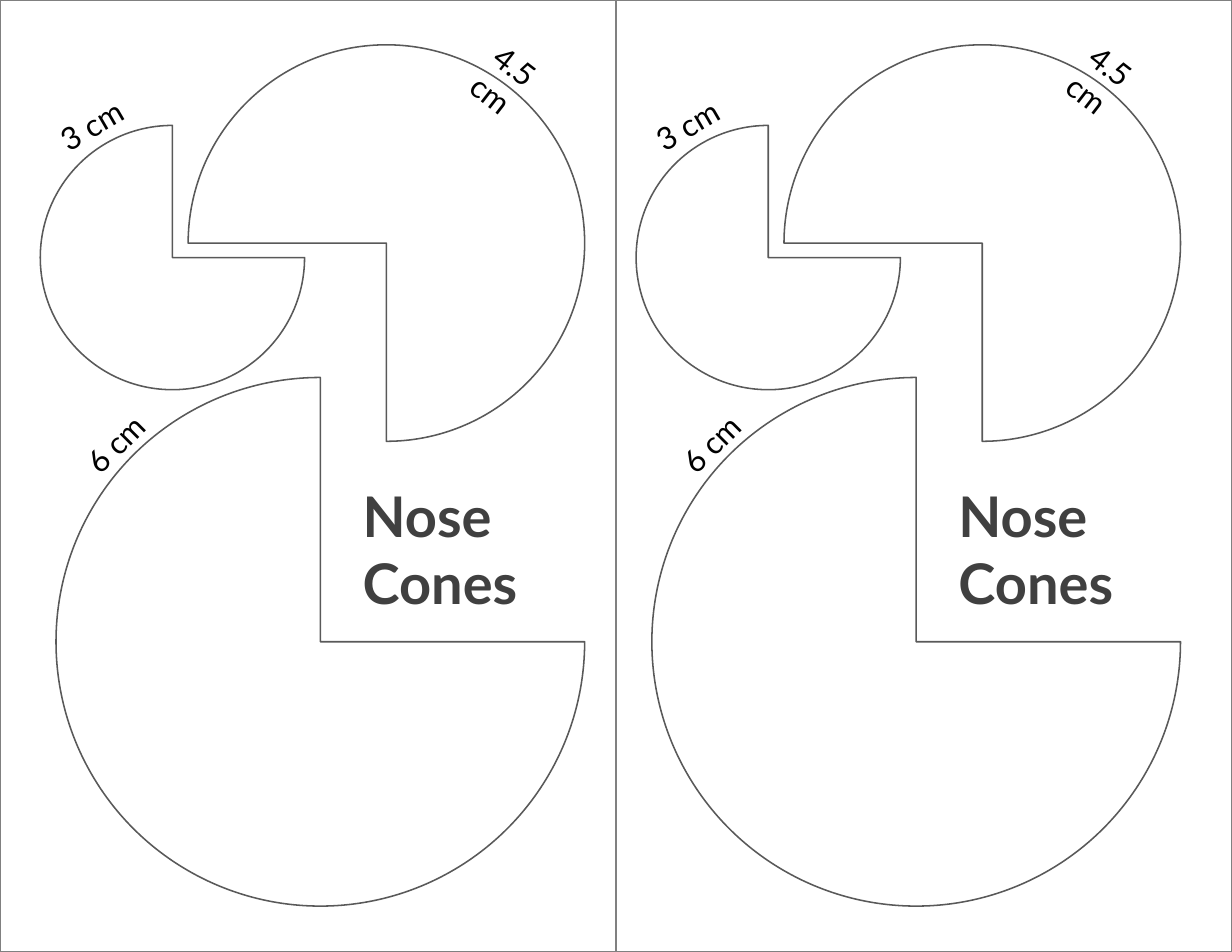
from lxml import etree
from pptx import Presentation
from pptx.dml.color import RGBColor
from pptx.enum.shapes import MSO_SHAPE
from pptx.enum.text import MSO_AUTO_SIZE
from pptx.oxml.ns import qn
from pptx.util import Inches, Pt

PIE = MSO_SHAPE.PIE
GROW = MSO_AUTO_SIZE.SHAPE_TO_FIT_TEXT
COLORS = {"border": "808080", "outline": "595959", "title": "404040", "label": "000000"}
FONT = "Lato"
PAGE_W, PAGE_H = 11, 8.5
HALF_W = PAGE_W / 2
TEMPLATE_LEFTS = (0.36, 5.68)

# left, top, diameter, rotation
CONES = [(0.14, 2.97, 4.72, 0), (1.32, 0, 3.54, 180), (0, 0.72, 2.36, 0)]
# text, left, top, width, rotation
RADII = [
    ("6 cm", 0.27, 3.33, 0.83, 315),
    ("3 cm", 0.06, 0.49, 0.83, 329.8),
    ("4.5 cm", 3.9, 0.1, 1.01, 37.8),
]


def add_border(cell):
    props = cell._tc.get_or_add_tcPr()
    for position, side in enumerate(("lnL", "lnR", "lnT", "lnB")):
        line = etree.Element(qn(f"a:{side}"), w=str(Pt(1)))
        fill = etree.SubElement(line, qn("a:solidFill"))
        etree.SubElement(fill, qn("a:srgbClr"), val=COLORS["border"])
        props.insert(position, line)


def add_page_halves(slide, left, top, width, height):
    halves = slide.shapes.add_table(
        1, 2, Inches(left), Inches(top), Inches(width), Inches(height)
    ).table
    halves.first_row = halves.horz_banding = False
    for column in halves.columns:
        column.width = Inches(width / 2)
    for cell in halves.iter_cells():
        cell.fill.background()
        add_border(cell)


def add_cone(slide, left, top, diameter, rotation):
    cone = slide.shapes.add_shape(
        PIE, Inches(left), Inches(top), Inches(diameter), Inches(diameter)
    )
    cone.rotation = rotation
    cone.shadow.inherit = False
    cone.fill.background()
    cone.line.color.rgb = RGBColor.from_string(COLORS["outline"])
    cone.line.width = Pt(1)


def add_words(slide, lines, left, top, width, height, size, color, bold=False, rotation=0):
    words = slide.shapes.add_textbox(
        Inches(left), Inches(top), Inches(width), Inches(height)
    )
    words.rotation = rotation
    frame = words.text_frame
    frame.word_wrap = False
    frame.auto_size = GROW
    frame.text = "\n".join(lines)
    for paragraph in frame.paragraphs:
        font = paragraph.font
        font.name = FONT
        font.size = Pt(size)
        font.bold = bold
        font.color.rgb = RGBColor.from_string(COLORS[color])


def add_template(slide, left, top):
    for x, y, diameter, rotation in CONES:
        add_cone(slide, left + x, top + y, diameter, rotation)
    add_words(slide, ["Nose", "Cones"], left + 2.78, top + 3.85, 1.63, 1.31,
              36, "title", bold=True)
    for text, x, y, width, rotation in RADII:
        add_words(slide, [text], left + x, top + y, width, 0.44,
                  20, "label", rotation=rotation)


def main():
    deck = Presentation()
    deck.slide_width, deck.slide_height = Inches(PAGE_W), Inches(PAGE_H)
    slide = deck.slides.add_slide(deck.slide_layouts[6])
    add_page_halves(slide, 0, 0, PAGE_W, PAGE_H)
    for left in TEMPLATE_LEFTS:
        add_template(slide, left, 0.4)
    deck.save("out.pptx")


if __name__ == "__main__":
    main()
